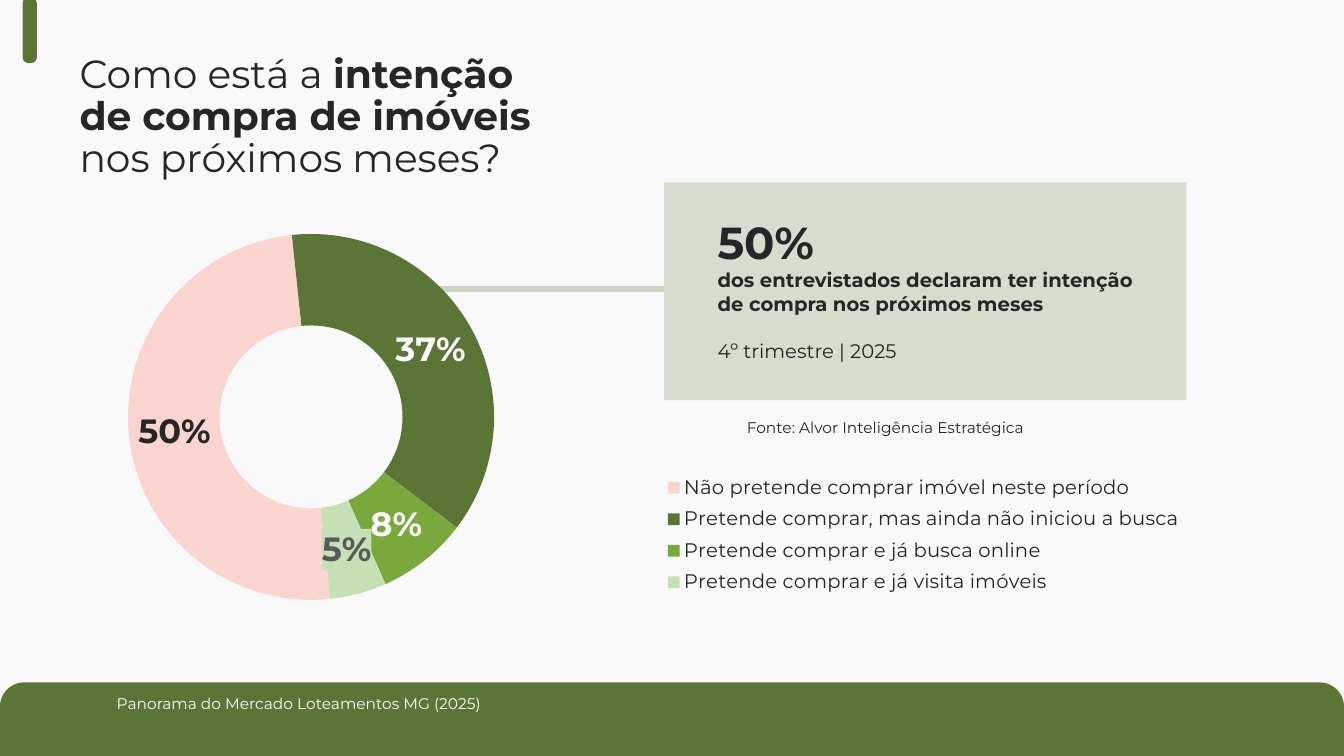
from lxml import etree
from pptx import Presentation, util as u
from pptx.chart.data import CategoryChartData
from pptx.dml.color import RGBColor
from pptx.enum import chart as charts, shapes, text
from pptx.oxml import parse_xml
from pptx.oxml.ns import nsdecls, qn

GREEN = RGBColor(0x5B, 0x75, 0x37)
LIME = RGBColor(0x7B, 0xA8, 0x3D)
MINT = RGBColor(0xC5, 0xE0, 0xB4)
RED = RGBColor(0xFF, 0x26, 0x00)
SAGE = RGBColor(0xD6, 0xDC, 0xCE)
RULE = RGBColor(0xCC, 0xD4, 0xC1)
DARK = RGBColor(0x26, 0x26, 0x26)
GRAY = RGBColor(0x59, 0x59, 0x59)
PAPER = RGBColor(0xF9, 0xF9, 0xF9)
WHITE = RGBColor(0xFF, 0xFF, 0xFF)
FONT = "Montserrat"

presentation = Presentation()
presentation.slide_width, presentation.slide_height = u.Inches(13.33), u.Inches(7.5)
slide = presentation.slides.add_slide(presentation.slide_layouts[6])
slide.background.fill.solid()
slide.background.fill.fore_color.rgb = PAPER


def share(*percents):
    """Turn alternating x and y percentages into slide lengths."""
    sides = (presentation.slide_width, presentation.slide_height)
    return [int(sides[i % 2] * percent / 100) for i, percent in enumerate(percents)]


def style(font, size, color, bold=False):
    font.name, font.size, font.bold = FONT, u.Pt(size), bold
    font.color.rgb = color


# Footer band, corner tab and callout panel
ROUND, RECT = shapes.MSO_SHAPE.ROUNDED_RECTANGLE, shapes.MSO_SHAPE.RECTANGLE
for kind, box, color, radius in (
    (ROUND, (0, 90.27, 100, 6.4), GREEN, 0.5),
    (RECT, (0, 93.6, 100, 6.4), GREEN, None),
    (ROUND, (1.69, -0.33, 1.05, 8.67), GREEN, 0.39),
    (RECT, (49.42, 24.13, 38.85, 28.8), SAGE, None),
):
    shape = slide.shapes.add_shape(kind, *share(*box))
    shape.shadow.inherit = False
    shape.fill.solid()
    shape.fill.fore_color.rgb = color
    shape.line.fill.background()
    if radius is not None:
        shape.adjustments[0] = radius

# Line from the ring to the callout
connector = slide.shapes.add_connector(
    shapes.MSO_CONNECTOR.STRAIGHT, *share(29.18, 38.27, 49.42, 38.27))
connector.line.color.rgb = RULE
connector.line.width = u.Pt(4.5)
etree.SubElement(connector.element.spPr, qn("a:effectLst"))

# Doughnut chart
data = CategoryChartData(number_format="0%")
data.categories = [
    "Não pretende comprar imóvel neste período",
    "Pretende comprar, mas ainda não iniciou a busca",
    "Pretende comprar e já busca online",
    "Pretende comprar e já visita imóveis",
]
data.add_series("Series 1", (0.5, 0.37, 0.08, 0.05))
chart = slide.shapes.add_chart(
    charts.XL_CHART_TYPE.DOUGHNUT, *share(3, 29.47, 93.9, 55.07), data).chart
chart.has_title = False
style(chart.font, 10, DARK)
chart.has_legend = True
chart.legend.position = charts.XL_LEGEND_POSITION.LEFT
chart.legend.include_in_layout = False
style(chart.legend.font, 14, DARK)

plot = chart.plots[0]
plot.vary_by_categories = True
ring = plot.series[0]
labels = ring.data_labels
labels.show_value = True
labels.show_percentage = False
labels.number_format, labels.number_format_is_linked = "0%", False
style(labels.font, 24, PAPER, True)
for index, (color, label_color) in enumerate(
        ((RED, DARK), (GREEN, PAPER), (LIME, PAPER), (MINT, GRAY))):
    point = ring.points[index]
    point.format.fill.solid()
    point.format.fill.fore_color.rgb = color
    point.format.line.fill.background()
    style(point.data_label.font, 24, label_color, True)

# Pale first slice, and a filled label on the last one
red = next(ring.points[0].format.fill._xPr.iter(qn("a:srgbClr")))
etree.SubElement(red, qn("a:alpha"), val="17000")
last_label = list(chart.element.iter(qn("c:dLbl")))[-1]
last_label.find(qn("c:txPr")).addprevious(parse_xml(
    f'<c:spPr {nsdecls("c", "a")}><a:solidFill><a:srgbClr val="{MINT}"/></a:solidFill></c:spPr>'))

# Ring rotation, hole and manual layouts
next(chart.element.iter(qn("c:firstSliceAng"))).set("val", "174")
next(chart.element.iter(qn("c:holeSize"))).set("val", "54")
for tag, inner, place in (
    ("c:plotArea", '<c:layoutTarget val="inner"/>', (0.064, 0.027, 0.301, 0.879)),
    ("c:legend", "", (0.49, 0.59, 0.42, 0.32)),
):
    part = next(chart.element.iter(qn(tag)))
    for old in part.findall(qn("c:layout")):
        part.remove(old)
    modes = '<c:xMode val="edge"/><c:yMode val="edge"/>'
    sizes = "".join(f'<c:{side} val="{value}"/>' for side, value in zip("xywh", place))
    layout = parse_xml(f'<c:layout {nsdecls("c")}><c:manualLayout>{inner}{modes}{sizes}'
                       '</c:manualLayout></c:layout>')
    part.insert(1 if tag == "c:legend" else 0, layout)

# Texts: box, anchor, line spacing, paragraphs of (space before, runs)
TOP, MIDDLE = text.MSO_ANCHOR.TOP, text.MSO_ANCHOR.MIDDLE
for box, anchor, spacing, paragraphs in (
    ((5.18, 4, 38.03, 23.2), MIDDLE, 0.9, [
        (0, [("Como está a ", 28, DARK, False),
             ("intenção de compra de imóveis ", 28, DARK, True),
             ("nos próximos meses?", 28, DARK, False)])]),
    ((52.65, 27.73, 32.48, 21.07), TOP, 1.0, [
        (0, [("50%", 32, DARK, True)]),
        (0, [("dos entrevistados declaram ter intenção de compra nos próximos meses",
              14, DARK, True)]),
        (17, [("4º trimestre | 2025", 14, DARK, False)])]),
    ((54.83, 54.67, 23.4, 3.87), TOP, 1.0, [
        (0, [("Fonte: Alvor Inteligência Estratégica", 11, DARK, False)])]),
    ((7.95, 91.2, 52.65, 3.87), TOP, 1.0, [
        (0, [("Panorama do Mercado Loteamentos MG (2025)", 11, WHITE, False)])]),
):
    frame = slide.shapes.add_textbox(*share(*box)).text_frame
    frame.word_wrap = True
    frame.vertical_anchor = anchor
    for number, (before, runs) in enumerate(paragraphs):
        paragraph = frame.add_paragraph() if number else frame.paragraphs[0]
        paragraph.line_spacing = spacing
        if before:
            paragraph.space_before = u.Pt(before)
        for words, size, color, bold in runs:
            run = paragraph.add_run()
            run.text = words
            style(run.font, size, color, bold)

presentation.save("out.pptx")
